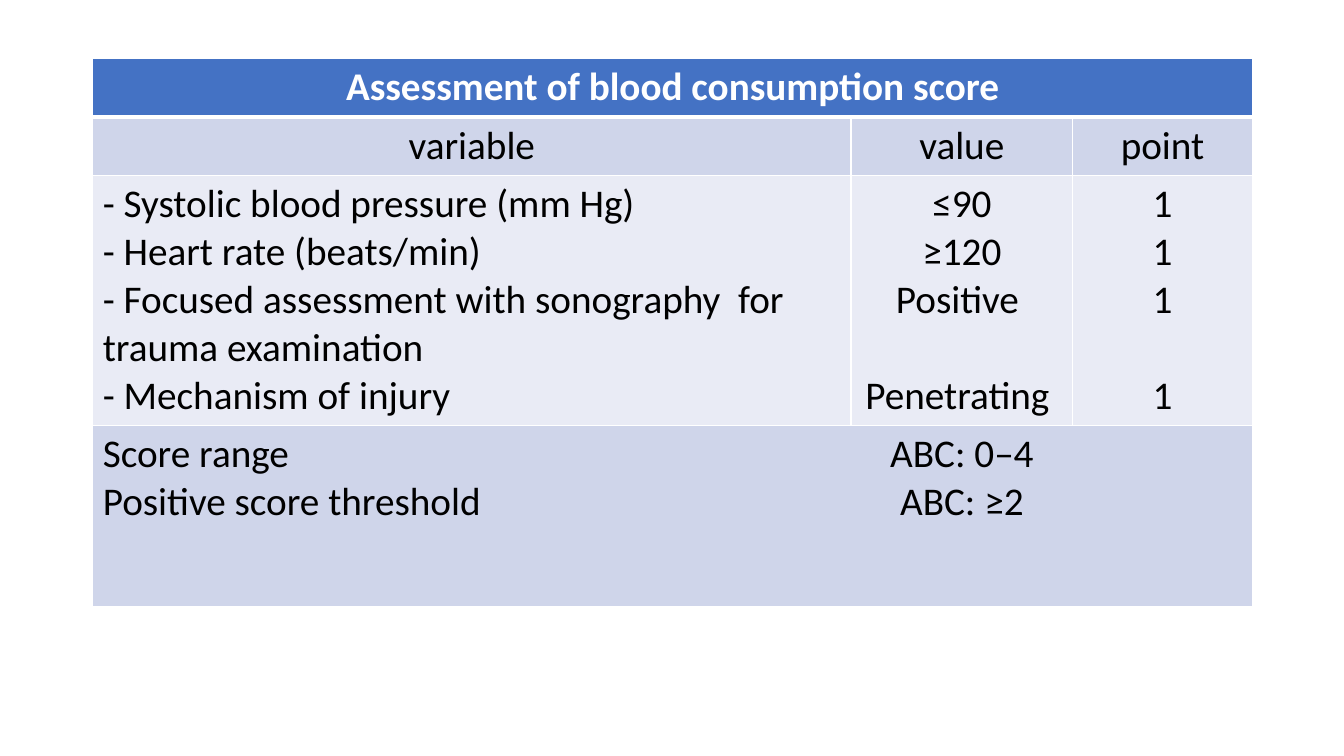
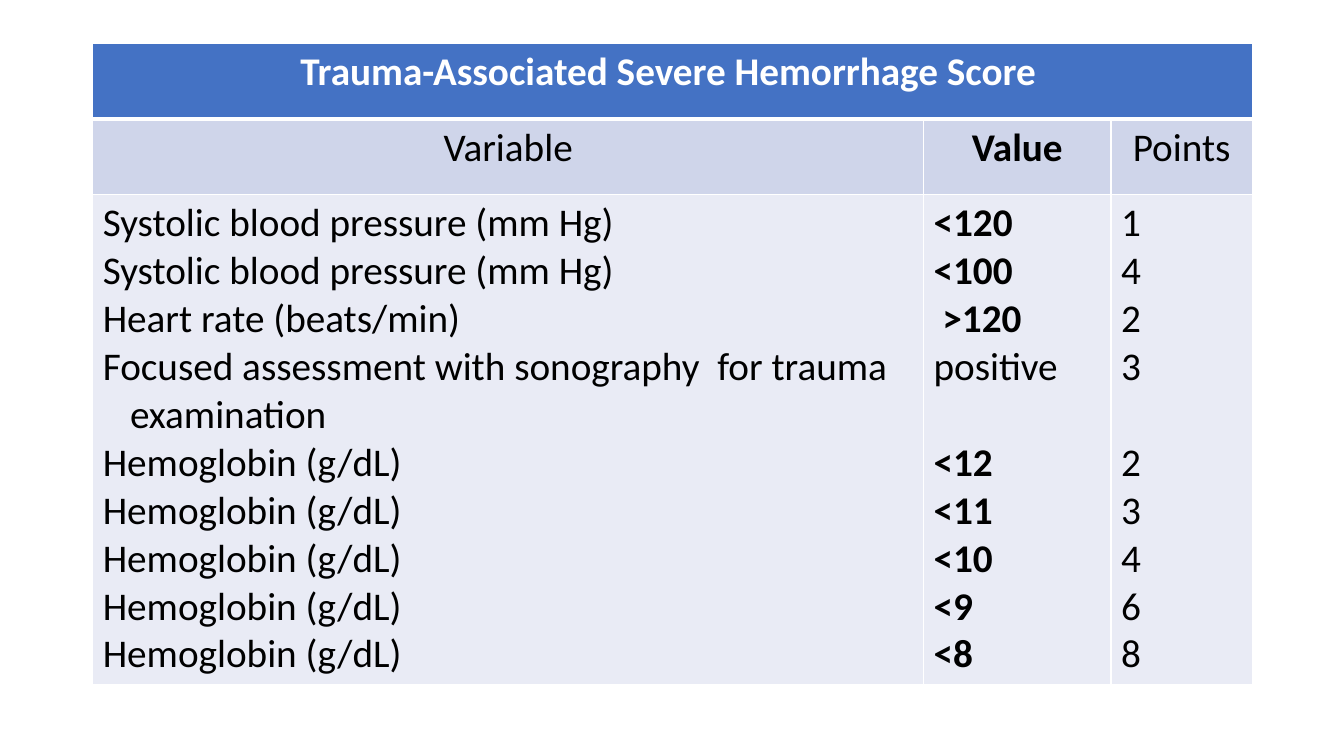
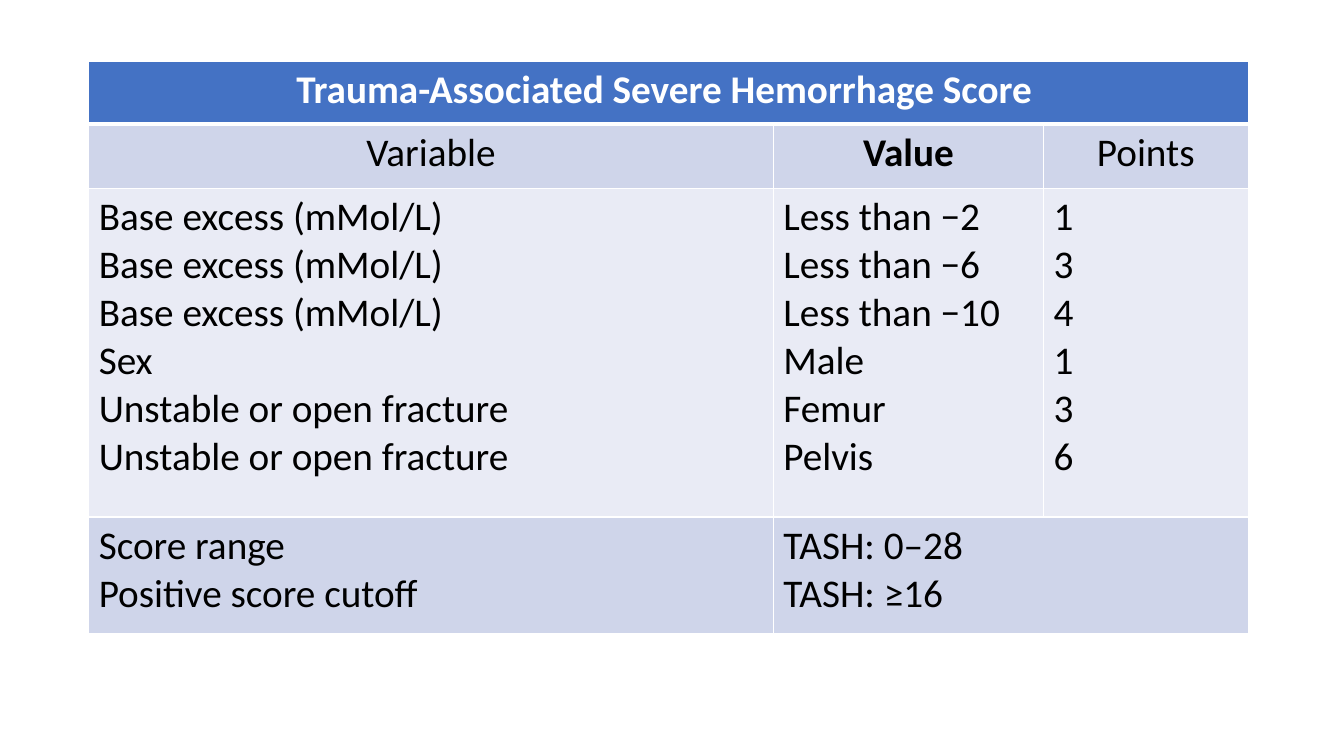
from lxml.etree import SubElement
from pptx import Presentation
from pptx.dml.color import RGBColor
from pptx.enum.text import PP_ALIGN
from pptx.oxml.ns import qn
from pptx.util import Inches, Pt

COLORS = {"title": "4472C4", "dark_band": "CFD5EA", "light_band": "E9EBF5",
          "white": "FFFFFF", "text": "000000"}
ROW_FILLS = ["title", "dark_band", "light_band", "dark_band"]
FONT, SIZE = "Calibri", 28
LINE_HEIGHT = 34.2  # points taken by one line of text
HANG = 0.27


def write(p, text, bold=False, color="text", align=PP_ALIGN.LEFT, before=0, hang=0, tab=None):
    p.alignment = align
    p.space_before = Pt(before)
    pPr = p._p.get_or_add_pPr()
    if hang:
        pPr.set("marL", str(Inches(hang)))
        pPr.set("indent", str(-Inches(hang)))
    if tab:
        tabs = SubElement(pPr, qn("a:tabLst"))
        SubElement(tabs, qn("a:tab"), pos=str(Inches(tab)), algn="ctr")
    r = p.add_run()
    r.text = text
    r.font.name, r.font.size, r.font.bold = FONT, Pt(SIZE), bold
    r.font.color.rgb = RGBColor.from_string(COLORS[color])


def set_borders(cell, top, bottom):
    tcPr = cell._tc.get_or_add_tcPr()
    for i, (side, width) in enumerate([("L", 1), ("R", 1), ("T", top), ("B", bottom)]):
        ln = SubElement(tcPr, qn("a:ln" + side), w=str(Pt(width)))
        fill = SubElement(ln, qn("a:solidFill"))
        SubElement(fill, qn("a:srgbClr"), val=COLORS["white"])
        tcPr.insert(i, ln)


# Each cell is a list of lines; "" skips a line, and a short row's last cell spans the rest
TASH_TITLE = [["Trauma-Associated Severe Hemorrhage Score "]]
TABLES = [
    {"at": (0.92, 0.58), "cols": [7.52, 2.2, 1.78], "rows": [0.58, 0.58, 2.48, 1.8],
     "centered": {1, 2}, "hang": 0, "tab": 8.52,
     "cells": [
         [["Assessment of blood consumption score"]],
         [["variable"], ["value"], ["point"]],
         [["- Systolic blood pressure (mm Hg)", "- Heart rate (beats/min)",
           "- Focused assessment with sonography  for trauma examination",
           "- Mechanism of injury"],
          [" ≤90 ", " ≥120 ", "Positive ", "", "Penetrating "],
          ["1", "1", "1", "", "1"]],
         [["Score range\tABC: 0–4", "Positive score threshold\tABC: ≥2"]]]},
    {"at": (0.92, 0.43), "cols": [8.24, 1.86, 1.4], "rows": [0.75, 0.75, 4.86],
     "centered": set(), "hang": HANG, "tab": None,
     "cells": [
         TASH_TITLE,
         [["Variable"], ["Value"], [" Points "]],
         [["Systolic blood pressure (mm Hg)"] * 2 + ["Heart rate (beats/min)",
           "Focused assessment with sonography  for trauma examination"]
          + ["Hemoglobin (g/dL)"] * 5,
          ["<120", "<100", " >120", "positive", "", "<12", "<11", "<10", "<9", "<8"],
          ["1", "4", "2", "3", "", "2", "3", "4", "6", "8"]]]},
    {"at": (0.88, 0.61), "cols": [6.79, 2.68, 2.03], "rows": [0.62, 0.64, 3.26, 1.16],
     "centered": set(), "hang": 0, "tab": None,
     "cells": [
         TASH_TITLE,
         [["Variable"], ["Value"], ["Points"]],
         [["Base excess (mMol/L)"] * 3 + ["Sex"] + ["Unstable or open fracture"] * 2,
          ["Less than −2", "Less than −6", "Less than −10", "Male", "Femur", "Pelvis"],
          ["1", "3", "4", "1", "3", "6"]],
         [["Score range", "Positive score cutoff"], ["TASH: 0–28", "TASH: ≥16"]]]},
]

prs = Presentation()
prs.slide_width, prs.slide_height = Inches(13.33), Inches(7.5)

for data in TABLES:
    s = prs.slides.add_slide(prs.slide_layouts[6])
    cols, rows = data["cols"], data["rows"]
    left, top = data["at"]
    table = s.shapes.add_table(len(rows), len(cols), Inches(left), Inches(top),
                               Inches(sum(cols)), Inches(sum(rows))).table
    table.first_row = table.horz_banding = False
    for col, width in zip(table.columns, cols):
        col.width = Inches(width)

    for i, row in enumerate(data["cells"]):
        table.rows[i].height = Inches(rows[i])
        # Fill and borders, with a thick rule under the title
        for j in range(len(cols)):
            cell = table.cell(i, j)
            cell.fill.solid()
            cell.fill.fore_color.rgb = RGBColor.from_string(COLORS[ROW_FILLS[i]])
            set_borders(cell, top=3 if i == 1 else 1, bottom=3 if i == 0 else 1)
        if len(row) < len(cols):
            table.cell(i, len(row) - 1).merge(table.cell(i, len(cols) - 1))

        # Text
        for j, lines in enumerate(row):
            tf = table.cell(i, j).text_frame
            centered = i < 2 or (i == 2 and j in data["centered"])
            p, before = tf.paragraphs[0], 0
            for n, text in enumerate(lines):
                if not text:
                    before = LINE_HEIGHT
                    continue
                if n:
                    p = tf.add_paragraph()
                write(p, text, before=before,
                      bold=i == 0 or text.strip().startswith(("Value", "<", ">")),
                      color="white" if i == 0 else "text",
                      align=PP_ALIGN.CENTER if centered else PP_ALIGN.LEFT,
                      hang=data["hang"] if i == 2 and j == 0 else 0,
                      tab=data["tab"] if "\t" in text else None)
                before = 0

prs.save("out.pptx")
